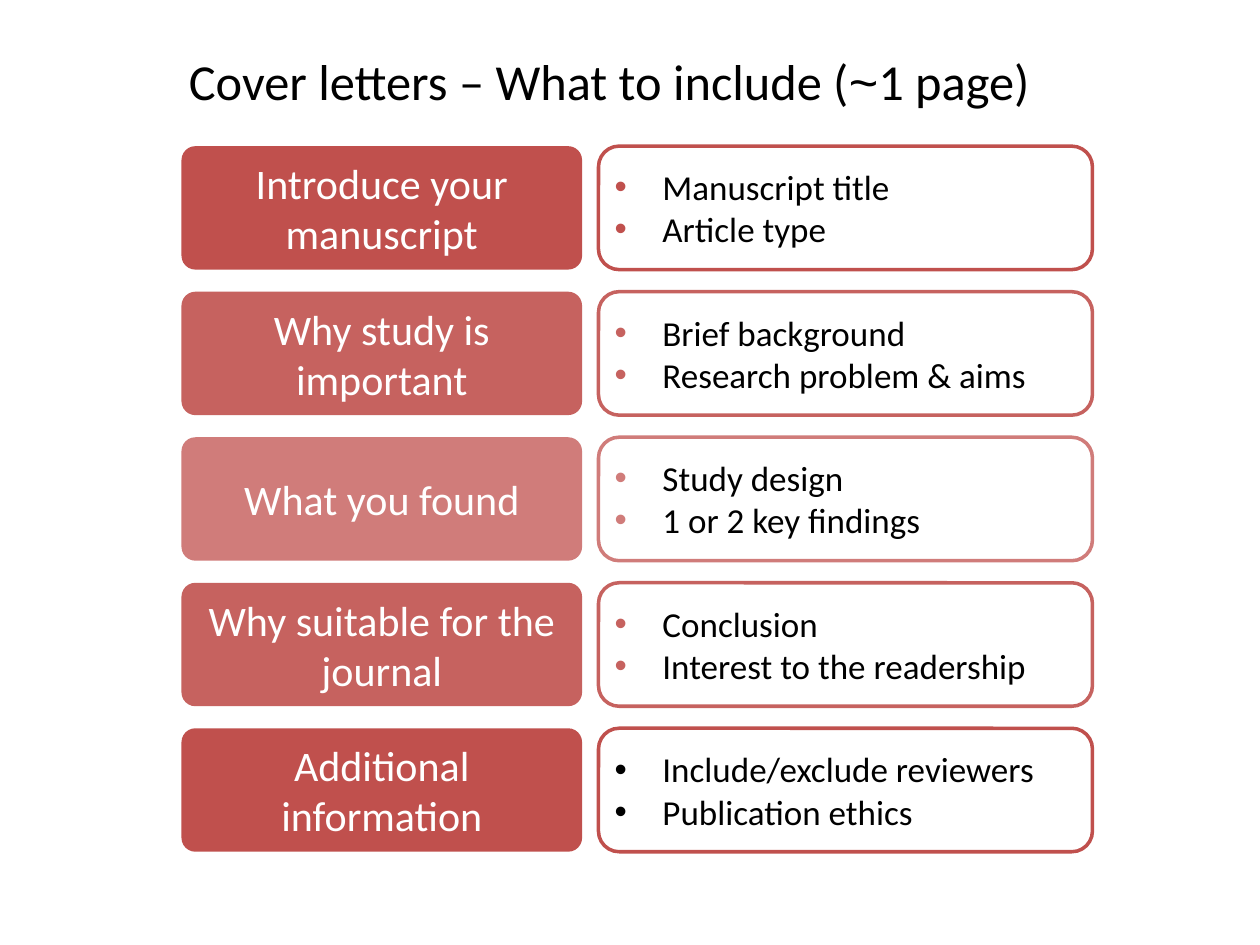
from lxml import etree
from pptx import Presentation
from pptx.dml.color import RGBColor
from pptx.enum.shapes import MSO_SHAPE
from pptx.enum.text import MSO_ANCHOR, MSO_AUTO_SIZE, PP_ALIGN
from pptx.oxml.ns import qn
from pptx.util import Inches, Pt

ROUNDED = MSO_SHAPE.ROUNDED_RECTANGLE
MIDDLE = MSO_ANCHOR.MIDDLE
NO_AUTOFIT = MSO_AUTO_SIZE.NONE
CENTER = PP_ALIGN.CENTER
LEFT = PP_ALIGN.LEFT

BLACK = "000000"
WHITE = "FFFFFF"
DARK_RED = "C0504D"
MEDIUM_RED = "C6625F"
LIGHT_RED = "D07C7A"

FIRST_TOP = 1.16
ROW_PITCH = 1.155
ROW_HEIGHT = 0.98
INSET = 0.08
BULLET_INDENT = 0.38

SECTIONS = [
    ("Introduce your manuscript", ["Manuscript title", "Article type"], DARK_RED, DARK_RED),
    ("Why study is important", ["Brief background", "Research problem & aims"], MEDIUM_RED, MEDIUM_RED),
    ("What you found", ["Study design", "1 or 2 key findings"], LIGHT_RED, LIGHT_RED),
    ("Why suitable for the journal", ["Conclusion", "Interest to the readership"], MEDIUM_RED, MEDIUM_RED),
    ("Additional information", ["Include/exclude reviewers", "Publication ethics"], DARK_RED, BLACK),
]


def color(value):
    return RGBColor.from_string(value)


def format_span(span, size, text_color, font="Calibri"):
    span.font.name = font
    span.font.size = Pt(size)
    span.font.color.rgb = color(text_color)


def add_title(page):
    title = page.shapes.title
    title.left, title.top = Inches(0.59), Inches(0.43)
    title.width, title.height = Inches(8.49), Inches(0.41)
    frame = title.text_frame
    frame.auto_size = NO_AUTOFIT
    frame.vertical_anchor = MIDDLE
    para = frame.paragraphs[0]
    para.alignment = CENTER
    for text, font in [
        ("Cover letters – What to include (", "Calibri"),
        ("~", "Arial"),
        ("1 page)", "Calibri"),
    ]:
        span = para.add_run()
        span.text = text
        format_span(span, 28.8, BLACK, font)


def add_box(page, left, top, width, fill, lines, size, text_color, alignment):
    box = page.shapes.add_shape(
        ROUNDED, Inches(left), Inches(top), Inches(width), Inches(ROW_HEIGHT)
    )
    box.shadow.inherit = False
    box.fill.solid()
    box.fill.fore_color.rgb = color(fill)
    frame = box.text_frame
    frame.word_wrap = True
    frame.vertical_anchor = MIDDLE
    frame.margin_left = frame.margin_right = Inches(INSET)
    frame.margin_top = frame.margin_bottom = Inches(INSET)
    frame.text = "\n".join(lines)
    for para in frame.paragraphs:
        para.alignment = alignment
        format_span(para.runs[0], size, text_color)
    return box


def add_bullet(para, bullet_color):
    properties = para._p.get_or_add_pPr()
    properties.set("marL", str(Inches(BULLET_INDENT)))
    properties.set("indent", str(-Inches(BULLET_INDENT)))
    holder = etree.SubElement(properties, qn("a:buClr"))
    etree.SubElement(holder, qn("a:srgbClr"), val=bullet_color)
    etree.SubElement(properties, qn("a:buFont"), typeface="Arial")
    etree.SubElement(properties, qn("a:buChar"), char="•")


def add_heading(page, top, text, fill):
    box = add_box(page, 1.44, top, 3.18, fill, [text], 24, WHITE, CENTER)
    box.adjustments[0] = 0.113
    box.line.fill.background()


def add_details(page, top, lines, outline, bullet_color):
    box = add_box(page, 4.75, top, 3.92, WHITE, lines, 20, BLACK, LEFT)
    box.line.color.rgb = color(outline)
    box.line.width = Pt(2)
    for para in box.text_frame.paragraphs:
        add_bullet(para, bullet_color)


def main():
    deck = Presentation()
    deck.slide_width, deck.slide_height = Inches(10), Inches(7.5)
    page = deck.slides.add_slide(deck.slide_layouts[5])
    add_title(page)
    for row, (heading, details, shade, bullet_color) in enumerate(SECTIONS):
        top = FIRST_TOP + row * ROW_PITCH
        add_heading(page, top, heading, shade)
        add_details(page, top, details, shade, bullet_color)
    deck.save("out.pptx")


if __name__ == "__main__":
    main()
